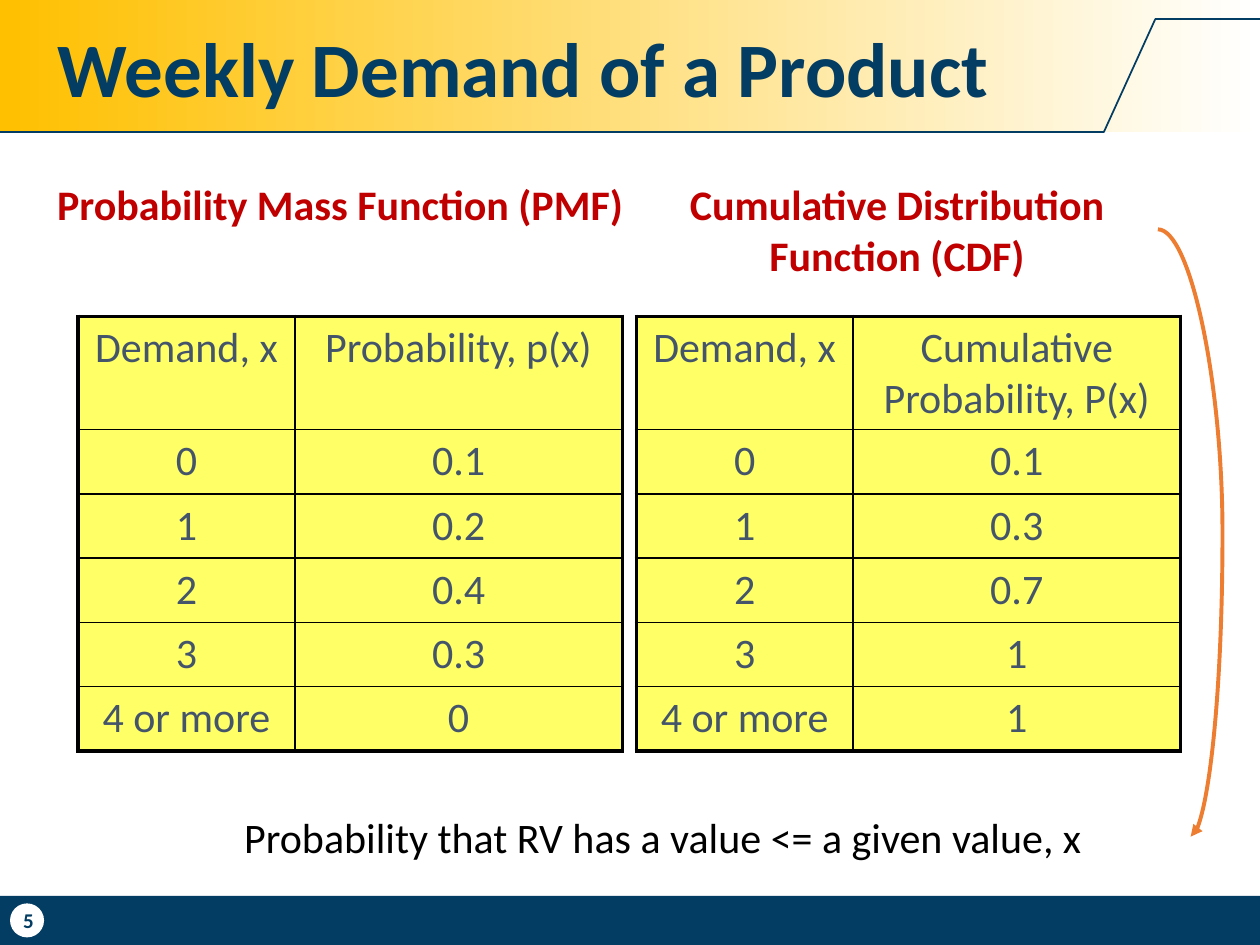
from lxml import etree
from pptx import Presentation
from pptx.dml.color import RGBColor
from pptx.enum.shapes import MSO_CONNECTOR, MSO_SHAPE
from pptx.enum.text import MSO_ANCHOR, PP_ALIGN
from pptx.oxml.ns import qn
from pptx.util import Inches, Pt

STRAIGHT, CURVE = MSO_CONNECTOR.STRAIGHT, MSO_CONNECTOR.CURVE
RECTANGLE, OVAL = MSO_SHAPE.RECTANGLE, MSO_SHAPE.OVAL
LEFT, CENTER = PP_ALIGN.LEFT, PP_ALIGN.CENTER
TOP, MIDDLE = MSO_ANCHOR.TOP, MSO_ANCHOR.MIDDLE

NAVY = RGBColor(0x04, 0x3D, 0x63)
GOLD = RGBColor(0xFF, 0xC0, 0x00)
WHITE = RGBColor(0xFF, 0xFF, 0xFF)
BLACK = RGBColor(0x00, 0x00, 0x00)
RED = RGBColor(0xC0, 0x00, 0x00)
SLATE = RGBColor(0x44, 0x54, 0x6A)
YELLOW = RGBColor(0xFF, 0xFF, 0x66)
ORANGE = RGBColor(0xED, 0x7D, 0x31)
FONT = "Calibri"

# text, (left, top, width, height), size, colour, bold, alignment, anchor
TEXTS = [
    ("Weekly Demand of a Product", (0.36, 0.11, 8.96, 0.94), 44, NAVY, True, LEFT, MIDDLE),
    ("5", (-0.01, 7.09, 0.47, 0.43), 12, NAVY, True, CENTER, MIDDLE),
    ("Probability Mass Function (PMF)", (-0.01, 1.37, 5.42, 0.5), 24, RED, True, CENTER, TOP),
    ("Cumulative Distribution Function (CDF)", (5.05, 1.37, 4.14, 0.91), 24, RED, True, CENTER, TOP),
    ("Probability that RV has a value <= a given value, x", (1.84, 6.39, 7.6, 0.5),
     24, BLACK, False, LEFT, TOP),
]
DEMANDS = ["0", "1", "2", "3", "4 or more"]
# left edge, value heading, values
TABLES = [
    (0.62, "Probability, p(x)", ["0.1", "0.2", "0.4", "0.3", "0"]),
    (5.05, "Cumulative Probability, P(x)", ["0.1", "0.3", "0.7", "1", "1"]),
]
TABLE_TOP = 2.51
COLUMN_WIDTHS = [1.72, 2.6]
ROW_HEIGHTS = [0.9] + [0.51] * len(DEMANDS)
HEADER_OUTLINE = [(0, 1.05), (8.76, 1.05), (9.17, 0.15), (10, 0.15)]
ARROW_START, ARROW_END = (9.19, 1.82), (9.45, 6.64)
ARROW_BULGE = 197300  # thousandths of a percent of the arrow's width


def add_plain_shape(slide, preset, box):
    shape = slide.shapes.add_shape(preset, *map(Inches, box))
    shape.shadow.inherit = False
    shape.line.fill.background()
    return shape


def add_line(slide, kind, start, end, color, width):
    line = slide.shapes.add_connector(kind, *map(Inches, start + end))
    line.line.color.rgb = color
    line.line.width = Pt(width)
    etree.SubElement(line._element.spPr, qn("a:effectLst"))
    return line


def write(frame, text, size, color, bold=False, align=CENTER):
    paragraph = frame.paragraphs[0]
    paragraph.alignment = align
    run = paragraph.add_run()
    run.text = text
    run.font.name = FONT
    run.font.size = Pt(size)
    run.font.bold = bold
    run.font.color.rgb = color
    return paragraph


def set_borders(cell, widths):
    """Draw black borders; widths maps L, R, T, B to points."""
    properties = cell._tc.get_or_add_tcPr()
    for side, width in widths.items():
        border = etree.SubElement(properties, qn(f"a:ln{side}"), w=str(Pt(width)))
        fill = etree.SubElement(border, qn("a:solidFill"))
        etree.SubElement(fill, qn("a:srgbClr"), val=str(BLACK))


def add_demand_table(slide, left, heading, values):
    rows = [("Demand, x", heading), *zip(DEMANDS, values)]
    last_row, last_column = len(rows) - 1, len(COLUMN_WIDTHS) - 1
    table = slide.shapes.add_table(
        len(rows), len(COLUMN_WIDTHS), Inches(left), Inches(TABLE_TOP),
        Inches(sum(COLUMN_WIDTHS)), Inches(sum(ROW_HEIGHTS))).table
    table.first_row = table.horz_banding = False
    for column, width in zip(table.columns, COLUMN_WIDTHS):
        column.width = Inches(width)
    for row, height in zip(table.rows, ROW_HEIGHTS):
        row.height = Inches(height)
    for r, row in enumerate(rows):
        for c, text in enumerate(row):
            cell = table.cell(r, c)
            outer = {"L": c == 0, "R": c == last_column, "T": r == 0, "B": r == last_row}
            set_borders(cell, {side: 2.25 if edge else 1 for side, edge in outer.items()})
            cell.fill.solid()
            cell.fill.fore_color.rgb = YELLOW
            write(cell.text_frame, text, 24, SLATE)


def add_frame(slide):
    """Header band with its outline, footer bar and page-number disc."""
    header = add_plain_shape(slide, RECTANGLE, (0, 0, 10, 1.05))
    header.fill.gradient()
    header.fill.gradient_angle = 0
    for stop, color in zip(header.fill.gradient_stops, (GOLD, WHITE)):
        stop.color.rgb = color
    for preset, box, color in [(RECTANGLE, (0, 7.11, 10, 0.39), NAVY),
                               (OVAL, (0.08, 7.17, 0.27, 0.27), WHITE)]:
        shape = add_plain_shape(slide, preset, box)
        shape.fill.solid()
        shape.fill.fore_color.rgb = color
    for start, end in zip(HEADER_OUTLINE, HEADER_OUTLINE[1:]):
        add_line(slide, STRAIGHT, start, end, NAVY, 1)


def add_curved_arrow(slide):
    arrow = add_line(slide, CURVE, ARROW_START, ARROW_END, ORANGE, 2.25)
    etree.SubElement(arrow.line._get_or_add_ln(), qn("a:tailEnd"), type="triangle")
    adjustments = arrow._element.spPr.find(qn("a:prstGeom")).get_or_add_avLst()
    etree.SubElement(adjustments, qn("a:gd"), name="adj1", fmla=f"val {ARROW_BULGE}")


def main():
    prs = Presentation()
    prs.slide_width, prs.slide_height = Inches(10), Inches(7.5)
    slide = prs.slides.add_slide(prs.slide_layouts[6])
    add_frame(slide)
    for text, box, size, color, bold, align, anchor in TEXTS:
        frame = slide.shapes.add_textbox(*map(Inches, box)).text_frame
        frame.word_wrap = True
        frame.vertical_anchor = anchor
        paragraph = write(frame, text, size, color, bold, align)
        if size == 44:
            paragraph.line_spacing = 0.9
    for left, heading, values in TABLES:
        add_demand_table(slide, left, heading, values)
    add_curved_arrow(slide)
    prs.save("out.pptx")


if __name__ == "__main__":
    main()
